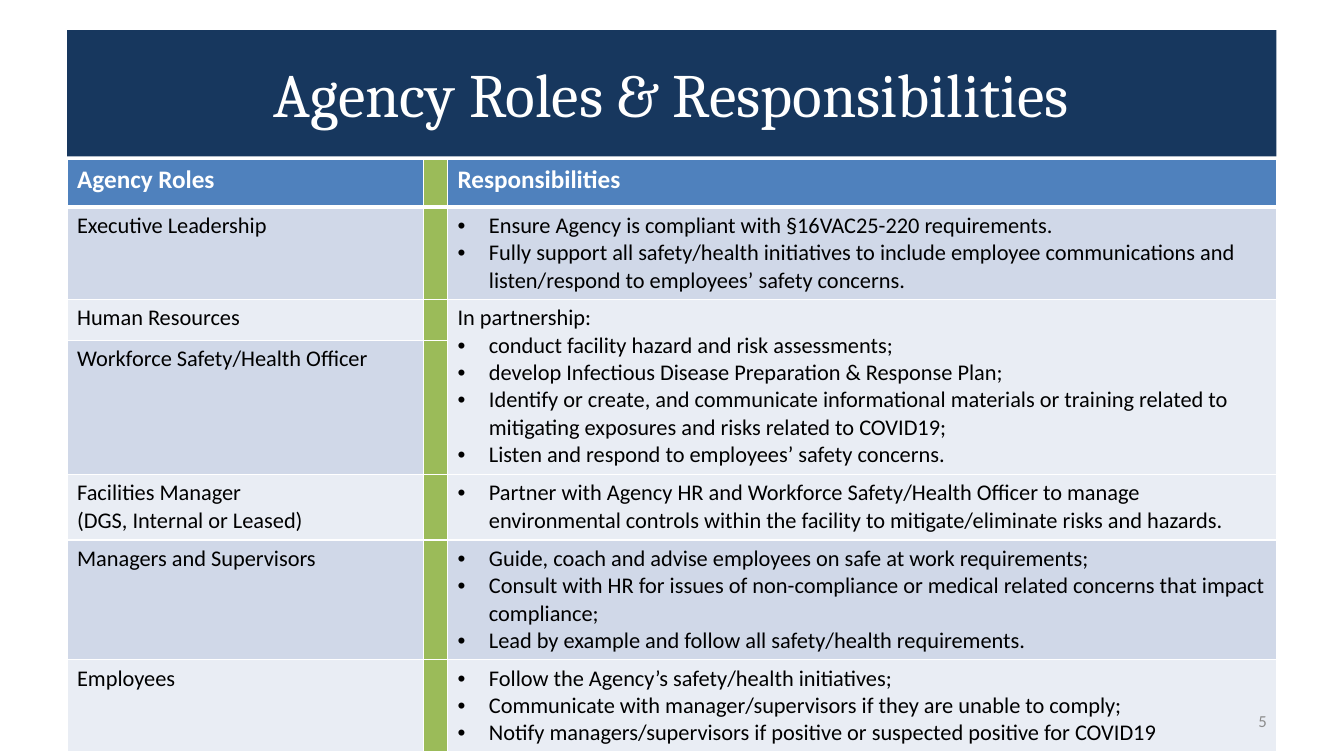
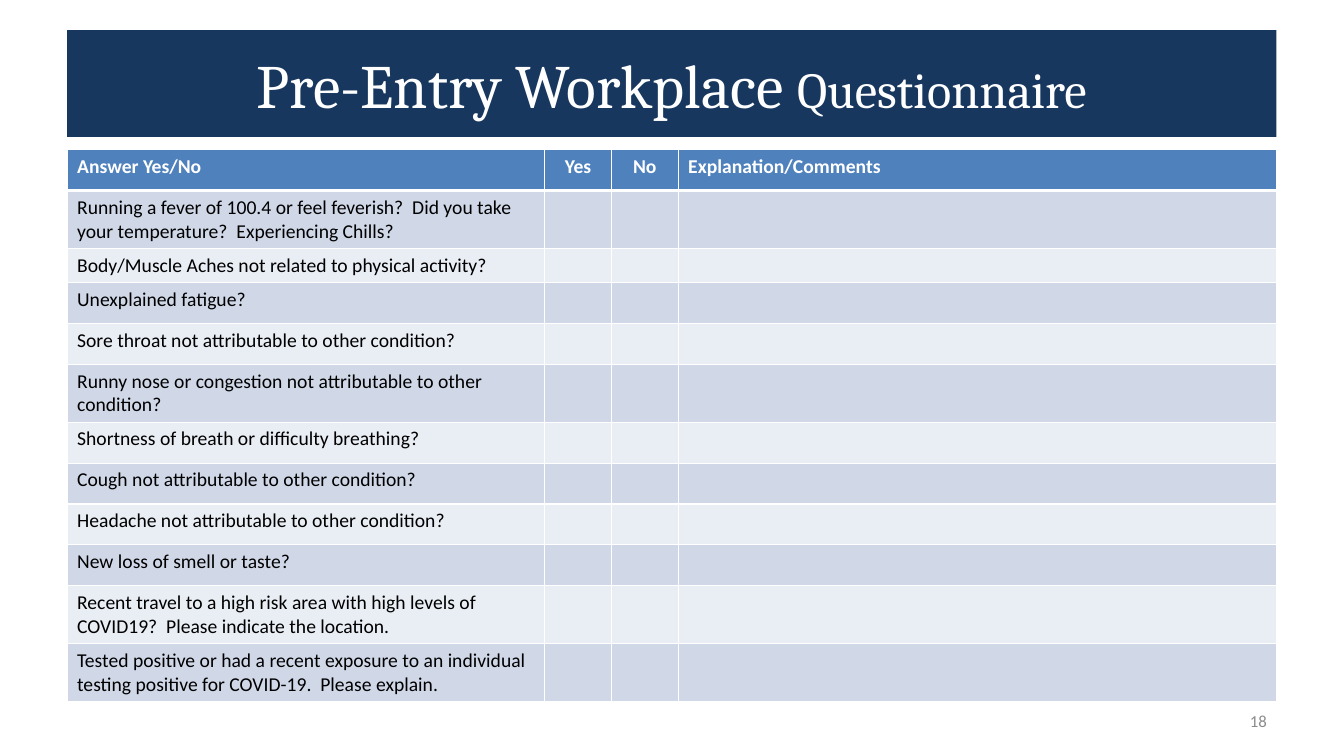
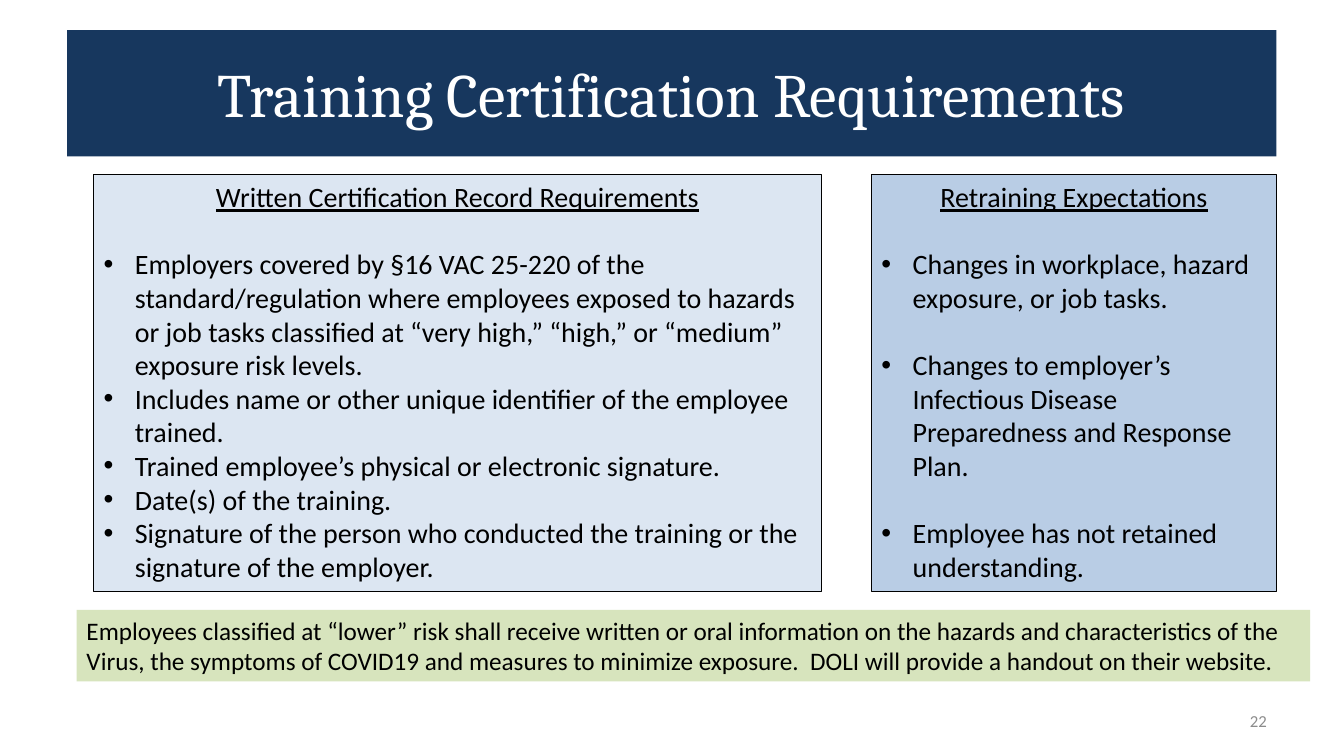
from lxml import etree
from pptx import Presentation
from pptx import util as u
from pptx.dml.color import RGBColor
from pptx.enum import shapes, text
from pptx.oxml import ns

# Shared look
NAVY, BLUE, GREEN = "17375E", "4F81BD", "9BBB59"
ROW_FILLS = ("D0D8E8", "E9EDF4")
PALE_BLUE, MID_BLUE, PALE_GREEN = "DCE6F2", "B9CDE5", "D7E4BD"
WHITE, BLACK, GRAY = "FFFFFF", "000000", "8C8C8C"
TITLE_FONT, BODY_FONT = "Cambria", "Calibri"
LEFT, WIDTH = 1.69, 30.48
BULLET = "• "
ALIGN = text.PP_ALIGN

ROLES = [
    (["Agency Roles"], ["Responsibilities"]),
    (["Executive Leadership"],
     ["• Ensure Agency is compliant with §16VAC25-220 requirements.",
      "• Fully support all safety/health initiatives to include employee "
      "communications and listen/respond to employees’ safety concerns."]),
    (["Human Resources"],
     ["In partnership:",
      "• conduct facility hazard and risk assessments;",
      "• develop Infectious Disease Preparation & Response Plan;",
      "• Identify or create, and communicate informational materials or training "
      "related to mitigating exposures and risks related to COVID19;",
      "• Listen and respond to employees’ safety concerns."]),
    (["Workforce Safety/Health Officer"], []),
    (["Facilities Manager", "(DGS, Internal or Leased)"],
     ["• Partner with Agency HR and Workforce Safety/Health Officer to manage "
      "environmental controls within the facility to mitigate/eliminate risks "
      "and hazards."]),
    (["Managers and Supervisors"],
     ["• Guide, coach and advise employees on safe at work requirements;",
      "• Consult with HR for issues of non-compliance or medical related concerns "
      "that impact compliance;",
      "• Lead by example and follow all safety/health requirements."]),
    (["Employees"],
     ["• Follow the Agency’s safety/health initiatives;",
      "• Communicate with manager/supervisors if they are unable to comply;",
      "• Notify managers/supervisors if positive or suspected positive for COVID19"]),
]
ROLE_HEIGHTS = [1.2, 2.31, 1.03, 3.38, 1.65, 3.02, 2.31]

# Each question with the height of its row
QUESTIONS = [
    ("Running a fever of 100.4 or feel feverish?  Did you take your temperature?  "
     "Experiencing Chills?", 1.46),
    ("Body/Muscle Aches not related to physical activity?", 0.86),
    ("Unexplained fatigue?", 1.03),
    ("Sore throat not attributable to other condition?", 1.03),
    ("Runny nose or congestion not attributable to other condition?", 1.46),
    ("Shortness of breath or difficulty breathing?", 1.03),
    ("Cough not attributable to other condition?", 1.03),
    ("Headache not attributable to other condition?", 1.03),
    ("New loss of smell or taste?", 1.03),
    ("Recent travel to a high risk area with high levels of COVID19?  "
     "Please indicate the location.", 1.46),
    ("Tested positive or had a recent exposure to an individual testing positive "
     "for COVID-19.  Please explain.", 1.46),
]

RECORD_ITEMS = [
    "• Employers covered by §16 VAC 25-220 of the standard/regulation where "
    "employees exposed to hazards or job tasks classified at “very high,” “high,” "
    "or “medium” exposure risk levels.",
    "• Includes name or other unique identifier of the employee trained.",
    "• Trained employee’s physical or electronic signature.",
    "• Date(s) of the training.",
    "• Signature of the person who conducted the training or the signature of the "
    "employer.",
]
RETRAINING_ITEMS = [
    "• Changes in workplace, hazard exposure, or job tasks.",
    "• Changes to employer’s Infectious Disease Preparedness and Response Plan.",
    "• Employee has not retained understanding.",
]
LOWER_RISK_NOTE = (
    "Employees classified at “lower” risk shall receive written or oral information "
    "on the hazards and characteristics of the Virus, the symptoms of COVID19 and "
    "measures to minimize exposure.  DOLI will provide a handout on their website.")


def color(value):
    return RGBColor.from_string(value)


def place(left, top, width, height):
    return [u.Cm(length) for length in (left, top, width, height)]


# Text
def format_run(run, size, ink, font=BODY_FONT, bold=False):
    run.font.size, run.font.name, run.font.bold = u.Pt(size), font, bold
    run.font.color.rgb = color(ink)


def add_bullet(paragraph):
    properties = paragraph._p.get_or_add_pPr()
    indent = u.Cm(0.79)
    properties.set("marL", str(indent))
    properties.set("indent", str(-indent))
    etree.SubElement(properties, ns.qn("a:buFont")).set("typeface", "Arial")
    etree.SubElement(properties, ns.qn("a:buChar")).set("char", BULLET.strip())


def write_lines(text_frame, lines, size, ink=BLACK, bold=False, align=ALIGN.LEFT):
    """Fill a frame, one paragraph a line; a leading bullet becomes a real one."""
    text_frame.text = "\n".join(line.removeprefix(BULLET) for line in lines)
    for paragraph, line in zip(text_frame.paragraphs, lines):
        paragraph.alignment = align
        if line.startswith(BULLET):
            add_bullet(paragraph)
        for run in paragraph.runs:
            format_run(run, size, ink, bold=bold)


# Shapes
def add_box(slide, box, fill, line=None, anchor=text.MSO_ANCHOR.TOP):
    shape = slide.shapes.add_shape(shapes.MSO_SHAPE.RECTANGLE, *place(*box))
    shape.shadow.inherit = False
    shape.fill.solid()
    shape.fill.fore_color.rgb = color(fill)
    if line:
        shape.line.color.rgb = color(line)
        shape.line.width = u.Pt(0.75)
    else:
        shape.line.fill.background()
    shape.text_frame.word_wrap = True
    shape.text_frame.vertical_anchor = anchor
    return shape


def add_panel(slide, box, fill, heading, items, gap=0):
    """Outlined box: underlined heading, then bullets with a gap between them."""
    text_frame = add_box(slide, box, fill, BLACK).text_frame
    write_lines(text_frame, [heading, *items], 20)
    head, first, *others = text_frame.paragraphs
    head.alignment = ALIGN.CENTER
    head.runs[0].font.underline = True
    first.space_before = u.Pt(24)
    for paragraph in others:
        paragraph.space_before = u.Pt(gap)


def add_page(presentation, number, title_parts, band_height=3.18):
    """New slide with its title band and page number."""
    slide = presentation.slides.add_slide(presentation.slide_layouts[6])
    band = add_box(slide, (LEFT, 0.76, WIDTH, band_height), NAVY,
                   anchor=text.MSO_ANCHOR.MIDDLE)
    paragraph = band.text_frame.paragraphs[0]
    paragraph.alignment = ALIGN.CENTER
    for words, size in title_parts:
        run = paragraph.add_run()
        run.text = words
        format_run(run, size, WHITE, TITLE_FONT)
    return slide


def add_page_number(slide, number):
    text_frame = slide.shapes.add_textbox(*place(24.28, 17.65, 7.9, 1.02)).text_frame
    text_frame.word_wrap = True
    text_frame.vertical_anchor = text.MSO_ANCHOR.MIDDLE
    write_lines(text_frame, [str(number)], 12, GRAY, align=ALIGN.RIGHT)


# Tables
def set_borders(cell, top, bottom):
    properties = cell._tc.get_or_add_tcPr()
    for side, width in (("L", 1), ("R", 1), ("T", top), ("B", bottom)):
        line = etree.SubElement(properties, ns.qn("a:ln" + side), w=str(u.Pt(width)))
        fill = etree.SubElement(line, ns.qn("a:solidFill"))
        etree.SubElement(fill, ns.qn("a:srgbClr"), val=WHITE)


def add_grid(slide, top, column_widths, row_heights):
    """Table with a header row, banded rows and white rules."""
    box = place(LEFT, top, sum(column_widths), sum(row_heights))
    table = slide.shapes.add_table(len(row_heights), len(column_widths), *box).table
    for column, width in zip(table.columns, column_widths):
        column.width = u.Cm(width)
    for index, (row, height) in enumerate(zip(table.rows, row_heights)):
        row.height = u.Cm(height)
        for cell in row.cells:
            set_borders(cell, 3 if index == 1 else 1, 3 if index == 0 else 1)
            fill_cell(cell, ROW_FILLS[(index - 1) % 2] if index else BLUE)
    return table


def fill_cell(cell, fill):
    cell.fill.solid()
    cell.fill.fore_color.rgb = color(fill)


def write_cell(cell, lines, size, header=False, align=ALIGN.LEFT):
    write_lines(cell.text_frame, lines, size, WHITE if header else BLACK, header, align)
    if not lines:  # an empty cell must not force a taller row
        ending = cell.text_frame.paragraphs[0]._p.get_or_add_endParaRPr()
        ending.set("sz", str(size * 100))


# Slides
def build_roles(presentation):
    slide = add_page(presentation, 5, [("Agency Roles & Responsibilities", 44)])
    table = add_grid(slide, 4.02, [8.98, 0.6, 20.9], ROLE_HEIGHTS)
    for index, (role, duties) in enumerate(ROLES):
        size = 16 if index else 18
        write_cell(table.cell(index, 0), role, size, index == 0)
        write_cell(table.cell(index, 1), [], size)
        fill_cell(table.cell(index, 1), GREEN)
        write_cell(table.cell(index, 2), duties, size, index == 0)
    table.cell(2, 2).merge(table.cell(3, 2))
    add_page_number(slide, 5)


def build_questionnaire(presentation):
    slide = add_page(presentation, 18,
                     [("Pre-Entry Workplace ", 44), ("Questionnaire", 36)], 2.69)
    heights = [1.03] + [height for _, height in QUESTIONS]
    table = add_grid(slide, 3.77, [12.04, 1.68, 1.68, 15.08], heights)
    headings = ["Answer Yes/No", "Yes", "No", "Explanation/Comments"]
    for column, heading in enumerate(headings):
        align = ALIGN.CENTER if heading in ("Yes", "No") else ALIGN.LEFT
        write_cell(table.cell(0, column), [heading], 14, True, align)
        for row, (question, _) in enumerate(QUESTIONS, 1):
            write_cell(table.cell(row, column), [] if column else [question], 14)
    add_page_number(slide, 18)


def build_training(presentation):
    slide = add_page(presentation, 22, [("Training Certification Requirements", 44)])
    add_panel(slide, (2.36, 4.4, 18.34, 10.5), PALE_BLUE,
              "Written Certification Record Requirements", RECORD_ITEMS)
    add_panel(slide, (21.96, 4.4, 10.21, 10.5), MID_BLUE,
              "Retraining Expectations", RETRAINING_ITEMS, gap=24)
    note = add_box(slide, (1.93, 15.37, 31.09, 1.8), PALE_GREEN)
    write_lines(note.text_frame, [LOWER_RISK_NOTE], 18)
    add_page_number(slide, 22)


def main():
    presentation = Presentation()
    presentation.slide_width = u.Cm(33.87)
    presentation.slide_height = u.Cm(19.05)
    build_roles(presentation)
    build_questionnaire(presentation)
    build_training(presentation)
    presentation.save("out.pptx")


if __name__ == "__main__":
    main()
